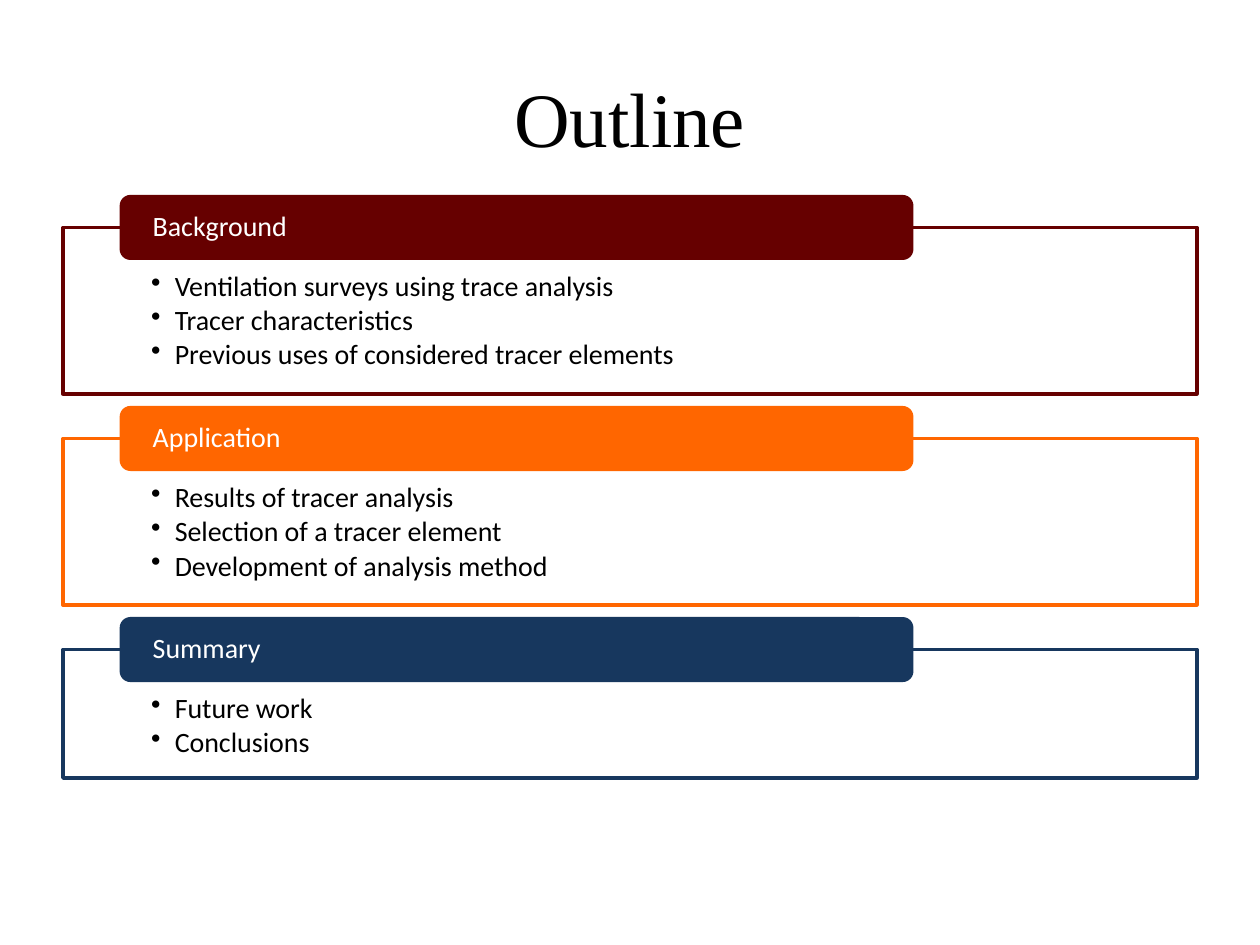
import dataclasses

import lxml.etree
import pptx
import pptx.dml.color
import pptx.enum.shapes
import pptx.enum.text
import pptx.oxml.ns
import pptx.util

Pt = pptx.util.Pt
Shape = pptx.enum.shapes.MSO_SHAPE
Align = pptx.enum.text.PP_ALIGN
Anchor = pptx.enum.text.MSO_ANCHOR


@dataclasses.dataclass(frozen=True)
class Theme:
    white: str = "FFFFFF"
    black: str = "000000"
    maroon: str = "660000"
    orange: str = "FF6600"
    navy: str = "17375E"
    serif: str = "Times New Roman"
    sans: str = "Calibri"
    head: float = 44
    body: float = 16


theme = Theme()
TAB = 37.2
GAP = 6.9

PANELS = [
    ("Background", theme.maroon, 113.7, [
        "Ventilation surveys using trace analysis",
        "Tracer characteristics",
        "Previous uses of considered tracer elements",
    ]),
    ("Application", theme.orange, 113.7, [
        "Results of tracer analysis",
        "Selection of a tracer element",
        "Development of analysis method",
    ]),
    ("Summary", theme.navy, 92, [
        "Future work",
        "Conclusions",
    ]),
]


def color(code):
    return pptx.dml.color.RGBColor.from_string(code)


def bullet(para, indent):
    props = para._p.get_or_add_pPr()
    props.set("marL", str(Pt(indent)))
    props.set("indent", str(-Pt(indent)))
    mark = lxml.etree.SubElement(props, pptx.oxml.ns.qn("a:buChar"))
    mark.set("char", "•")


def write(shape, lines, size=theme.body, font=theme.sans, ink=theme.black,
          align=Align.LEFT, anchor=Anchor.TOP, inset=(0, 0, 0, 0),
          lead=0.9, after=0, indent=0):
    frame = shape.text_frame
    frame.word_wrap = True
    frame.vertical_anchor = anchor
    (frame.margin_left, frame.margin_top,
     frame.margin_right, frame.margin_bottom) = map(Pt, inset)
    for i, line in enumerate(lines):
        para = frame.paragraphs[0] if i == 0 else frame.add_paragraph()
        para.text = line
        if indent:
            bullet(para, indent)
        para.alignment = align
        para.line_spacing = lead
        para.space_after = Pt(after)
        para.font.size = Pt(size)
        para.font.name = font
        para.font.color.rgb = color(ink)


def block(slide, kind, box, fill, line=None):
    shape = slide.shapes.add_shape(kind, *map(Pt, box))
    shape.shadow.inherit = False
    shape.fill.solid()
    shape.fill.fore_color.rgb = color(fill)
    if line:
        shape.line.color.rgb = color(line)
        shape.line.width = Pt(2)
    else:
        shape.line.fill.background()
    return shape


def title(slide, box, text):
    shape = slide.shapes.add_textbox(*map(Pt, box))
    write(shape, [text], size=theme.head, font=theme.serif, lead=1,
          align=Align.CENTER, anchor=Anchor.MIDDLE)


def panel(slide, box, name, hue, items):
    left, top, width, height = box
    drop = TAB / 2
    body = block(slide, Shape.RECTANGLE,
                 (left, top + drop, width, height - drop), theme.white, hue)
    write(body, items, inset=(50.4, 25.8, 50.4, 8.2), after=2.2, indent=13.5)
    tab = block(slide, Shape.ROUNDED_RECTANGLE,
                (left + width * 0.05, top, width * 0.7, TAB), hue)
    write(tab, [name], ink=theme.white, anchor=Anchor.MIDDLE,
          inset=(17.1, 0, 17.1, 0))


def main():
    deck = pptx.Presentation()
    deck.slide_width, deck.slide_height = Pt(720), Pt(540)
    slide = deck.slides.add_slide(deck.slide_layouts[6])
    title(slide, (36, 21.6, 648, 90), "Outline")
    top = 111.4
    for name, hue, height, items in PANELS:
        panel(slide, (36, top, 648, height), name, hue, items)
        top += height + GAP
    deck.save("out.pptx")


if __name__ == "__main__":
    main()
